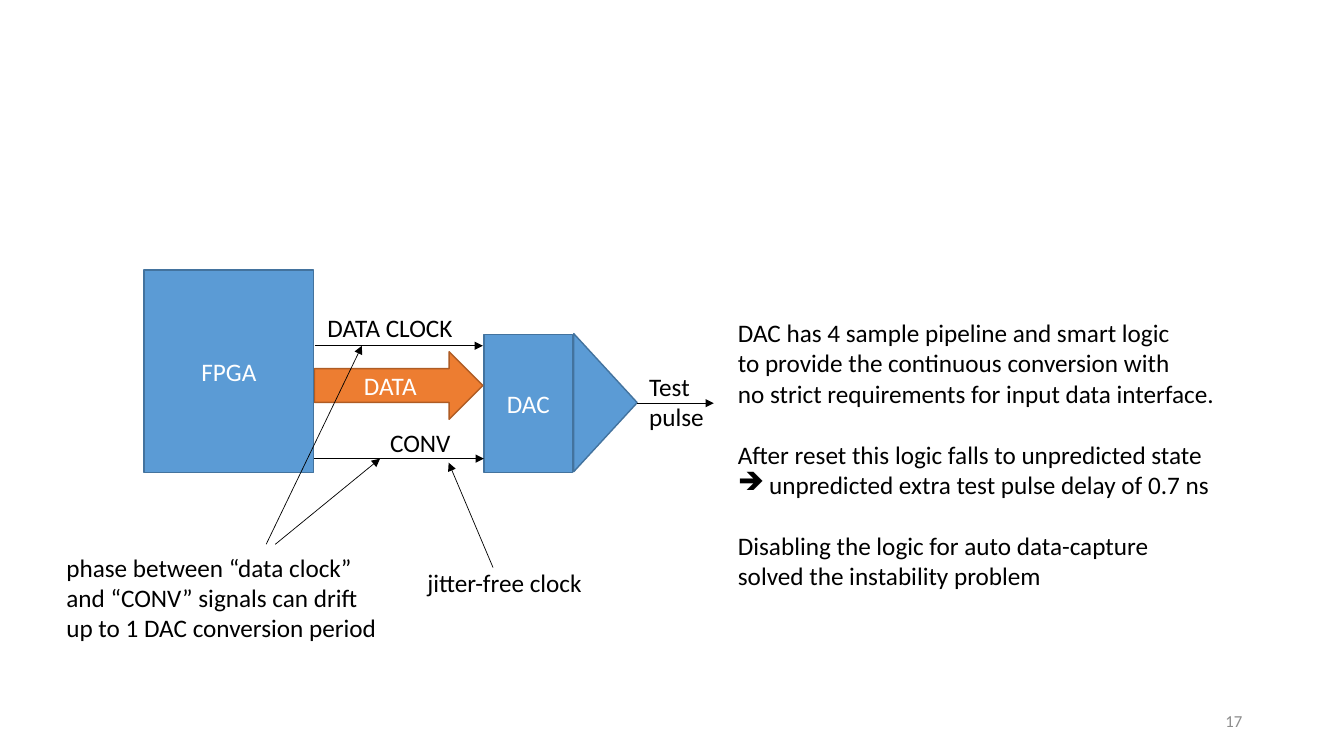
from lxml.etree import SubElement
from pptx import Presentation
from pptx.dml.color import RGBColor
from pptx.enum.shapes import MSO_CONNECTOR, MSO_SHAPE
from pptx.enum.text import MSO_ANCHOR, MSO_AUTO_SIZE, PP_ALIGN
from pptx.oxml.ns import qn
from pptx.util import Inches, Pt

BLACK = RGBColor(0x00, 0x00, 0x00)
WHITE = RGBColor(0xFF, 0xFF, 0xFF)
GRAY = RGBColor(0x8C, 0x8C, 0x8C)
BLUE = RGBColor(0x5B, 0x9B, 0xD5)
DARK_BLUE = RGBColor(0x43, 0x73, 0x9E)
ORANGE = RGBColor(0xED, 0x7D, 0x31)
DARK_ORANGE = RGBColor(0xAF, 0x5C, 0x24)


class Diagram:
    font_name = "Calibri"
    font_size = 18
    paragraph_gap = 22

    def __init__(self, page):
        self.page = page

    def style(self, paragraph, color, size=font_size, align=PP_ALIGN.LEFT):
        paragraph.alignment = align
        paragraph.font.name = self.font_name
        paragraph.font.size = Pt(size)
        paragraph.font.color.rgb = color

    def block(self, kind, left, top, width, height, text="", fill=BLUE, line=DARK_BLUE):
        shape = self.page.shapes.add_shape(
            kind, Inches(left), Inches(top), Inches(width), Inches(height))
        shape.shadow.inherit = False
        shape.fill.solid()
        shape.fill.fore_color.rgb = fill
        shape.line.color.rgb = line
        shape.line.width = Pt(1)
        if text:
            frame = shape.text_frame
            frame.text = text
            frame.vertical_anchor = MSO_ANCHOR.MIDDLE
            self.style(frame.paragraphs[0], WHITE, align=PP_ALIGN.CENTER)
        return shape

    def text(self, left, top, width, height, lines, **look):
        box = self.page.shapes.add_textbox(
            Inches(left), Inches(top), Inches(width), Inches(height))
        frame = box.text_frame
        frame.text = "\n".join(lines)
        frame.word_wrap = False
        frame.auto_size = MSO_AUTO_SIZE.SHAPE_TO_FIT_TEXT
        for paragraph in frame.paragraphs:
            self.style(paragraph, **{"color": BLACK, **look})
        return frame

    def arrow(self, start, end):
        points = [Inches(value) for value in (*start, *end)]
        connector = self.page.shapes.add_connector(MSO_CONNECTOR.STRAIGHT, *points)
        connector.line.color.rgb = BLACK
        connector.line.width = Pt(0.5)
        SubElement(connector.line._get_or_add_ln(), qn("a:tailEnd"), type="triangle")
        SubElement(connector._element.spPr, qn("a:effectLst"))

    def bullet(self, paragraph, symbol, indent):
        properties = paragraph._p.get_or_add_pPr()
        properties.set("marL", str(Inches(indent)))
        properties.set("indent", str(-Inches(indent)))
        mark = SubElement(properties, qn("a:buChar"), char=symbol)
        properties.find(qn("a:defRPr")).addprevious(mark)

    def gap_before(self, paragraph):
        paragraph.space_before = Pt(self.paragraph_gap)


def draw_converter(diagram):
    body = diagram.block(MSO_SHAPE.RECTANGLE, 4.8, 3.32, 0.88, 1.37, "DAC")
    tip = diagram.block(MSO_SHAPE.ISOSCELES_TRIANGLE, 5.32, 3.68, 1.37, 0.63)
    tip.rotation = 90
    diagram.page.shapes.add_group_shape([body, tip])


def draw_signals(diagram):
    diagram.block(MSO_SHAPE.RIGHT_ARROW, 3.12, 3.49, 1.67, 0.67, "DATA", ORANGE, DARK_ORANGE)
    diagram.arrow((3.12, 3.43), (4.79, 3.43))
    diagram.text(3.15, 3.05, 1.46, 0.4, ["DATA CLOCK"])
    diagram.arrow((3.11, 4.55), (4.8, 4.55))
    diagram.text(3.77, 4.19, 0.81, 0.4, ["CONV"])
    diagram.block(MSO_SHAPE.RECTANGLE, 1.43, 2.68, 1.68, 2.01, "FPGA")
    diagram.arrow((6.32, 4), (7.08, 4))
    diagram.text(6.34, 3.63, 0.75, 0.71, ["Test", "pulse"])


def draw_notes(diagram):
    diagram.arrow((4.89, 5.63), (4.45, 4.59))
    diagram.text(4.14, 5.58, 1.76, 0.4, ["jitter-free clock"])
    diagram.arrow((2.64, 5.4), (3.59, 3.43))
    diagram.arrow((2.73, 5.4), (3.77, 4.55))
    diagram.text(0.56, 5.43, 3.31, 1.01, [
        "phase between “data clock”",
        "and “CONV” signals can drift",
        "up to 1 DAC conversion period",
    ])
    explanation = diagram.text(7.22, 3.1, 4.98, 2.83, [
        "DAC has 4 sample pipeline and smart logic",
        "to provide the continuous conversion with",
        "no strict requirements for input data interface.",
        "After reset this logic falls to unpredicted state",
        "unpredicted extra test pulse delay of 0.7 ns",
        "Disabling the logic for auto data-capture",
        "solved the instability problem",
    ]).paragraphs
    diagram.gap_before(explanation[3])
    diagram.bullet(explanation[4], "➔", 0.31)
    diagram.gap_before(explanation[5])


def main():
    deck = Presentation()
    deck.slide_width = Inches(13.33)
    deck.slide_height = Inches(7.5)
    diagram = Diagram(deck.slides.add_slide(deck.slide_layouts[6]))
    number = diagram.text(9.42, 6.95, 3, 0.4, ["17"], color=GRAY, size=12, align=PP_ALIGN.RIGHT)
    number.word_wrap = True
    number.auto_size = MSO_AUTO_SIZE.NONE
    number.vertical_anchor = MSO_ANCHOR.MIDDLE
    draw_converter(diagram)
    draw_signals(diagram)
    draw_notes(diagram)
    deck.save("out.pptx")


if __name__ == "__main__":
    main()
